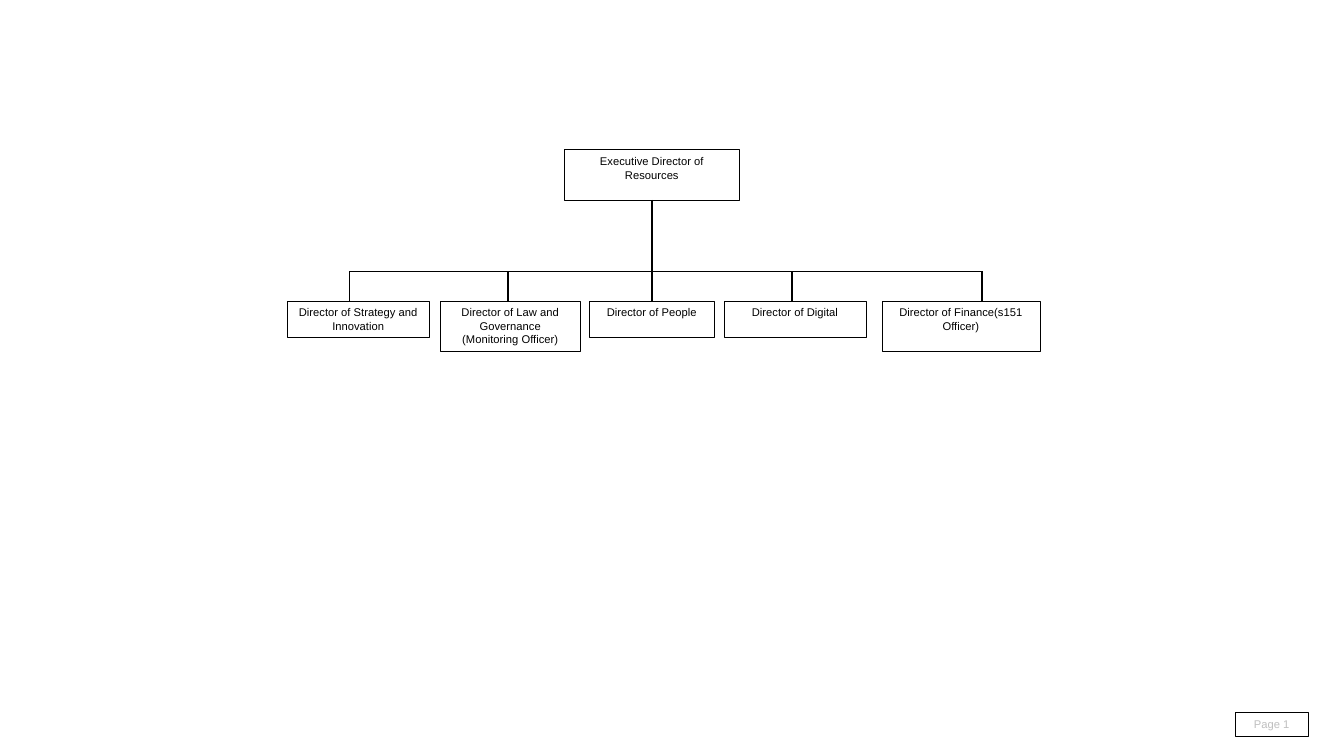
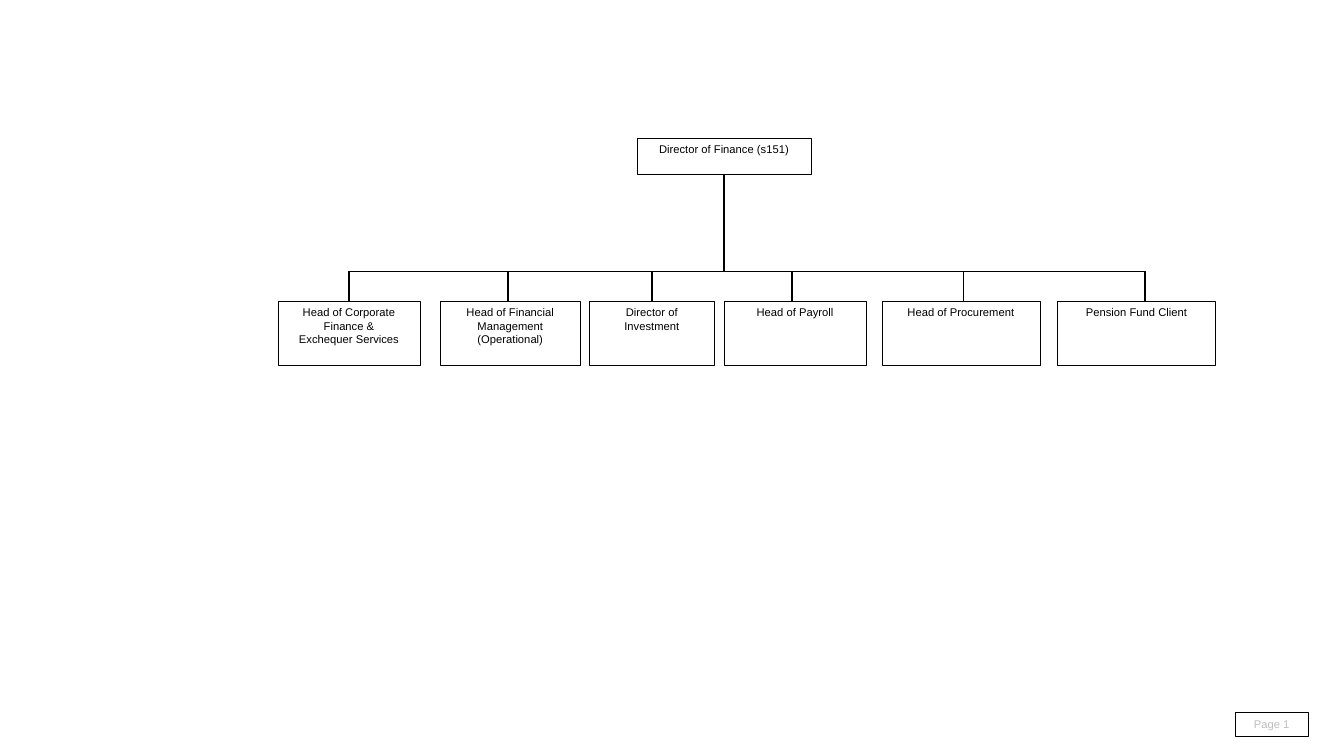
from pptx import Presentation
from pptx.dml.color import RGBColor
from pptx.enum.shapes import MSO_CONNECTOR, MSO_SHAPE
from pptx.enum.text import MSO_ANCHOR, PP_ALIGN
from pptx.oxml.ns import qn
from pptx.util import Inches, Pt
from lxml import etree

RECTANGLE = MSO_SHAPE.RECTANGLE
STRAIGHT = MSO_CONNECTOR.STRAIGHT
TOP, CENTER = MSO_ANCHOR.TOP, PP_ALIGN.CENTER
TOP_SIDE, BOTTOM_SIDE = 0, 2

# The grid has 160 columns and 90 rows, twelve cells to the inch
CELL = Inches(1) / 12
COLUMNS, ROWS = 160, 90
BUS_ROW, TEAM_ROW = 32.3, 35.8
LEAD_WIDTH = 20.8
COLORS = {"ink": "000000", "paper": "FFFFFF", "muted": "BFBFBF"}
FRAME = {"word_wrap": True, "vertical_anchor": TOP}
FONT = {"name": "Arial", "size": Pt(8)}


def cells(count):
    return round(count * CELL)


def color(name):
    return RGBColor.from_string(COLORS[name])


def apply(target, values):
    for name, value in values.items():
        setattr(target, name, value)


class Chart:
    """Holds the style and the current page of the organisation charts."""

    def __init__(self):
        self.deck = Presentation()
        self.deck.slide_width = cells(COLUMNS)
        self.deck.slide_height = cells(ROWS)
        self.page = None

    def new_page(self):
        self.page = self.deck.slides.add_slide(self.deck.slide_layouts[6])
        self.box("Page 1", 147.1, 84.8, 8.6, 2.9, ink="muted", fill="paper")

    def box(self, text, left, top, width, height, ink="ink", fill=None):
        box = self.page.shapes.add_shape(
            RECTANGLE, *map(cells, (left, top, width, height)))
        box.shadow.inherit = False
        if fill:
            box.fill.solid()
            box.fill.fore_color.rgb = color(fill)
        else:
            box.fill.background()
        box.line.color.rgb = color("ink")
        box.line.width = Pt(0.25)
        apply(box.text_frame, FRAME)
        box.text_frame.text = text
        for para in box.text_frame.paragraphs:
            para.alignment = CENTER
            apply(para.font, FONT)
            para.font.color.rgb = color(ink)
        return box

    def line(self, left, top, right, bottom):
        line = self.page.shapes.add_connector(
            STRAIGHT, *map(cells, (left, top, right, bottom)))
        line.line.color.rgb = color("ink")
        line.line.width = Pt(1)
        etree.SubElement(line._element.spPr, qn("a:effectLst"))
        return line

    def stem(self, box, side, column):
        """Run from a box to the bus, joined when it meets the side's middle."""
        middle = (box.left + box.width / 2) / CELL
        joined = abs(middle - column) < 0.1
        x = middle if joined else column
        edge = box.top + (box.height if side == BOTTOM_SIDE else 0)
        line = self.line(x, edge / CELL, x, BUS_ROW)
        if joined:
            line.begin_connect(box, side)

    def tree(self, lead, team):
        text, left, top, height = lead
        lead_box = self.box(text, left, top, LEAD_WIDTH, height)
        self.stem(lead_box, BOTTOM_SIDE, left + LEAD_WIDTH / 2)
        self.line(team[0][-1], BUS_ROW, team[-1][-1], BUS_ROW)
        for text, left, width, height, column in team:
            self.stem(self.box(text, left, TEAM_ROW, width, height), TOP_SIDE, column)


# Lead: text, left, top, height; team: text, left, width, height, stem column
CHARTS = [
    (("Executive Director of Resources", 67.2, 17.8, 6), [
        ("Director of Strategy and Innovation", 34.2, 16.9, 4.4, 41.6),
        ("Director of Law and Governance (Monitoring Officer)", 52.4, 16.7, 6, 60.5),
        ("Director of People", 70.2, 14.8, 4.4, 77.6),
        ("Director of Digital", 86.2, 16.9, 4.4, 94.3),
        ("Director of Finance(s151 Officer)", 105, 18.8, 6, 116.9),
    ]),
    (("Director of Finance (s151)", 75.8, 16.4, 4.4), [
        ("Head of Corporate Finance &\nExchequer Services", 33.1, 16.9, 7.7, 41.6),
        ("Head of Financial Management (Operational)", 52.4, 16.7, 7.7, 60.5),
        ("Director of Investment", 70.2, 14.8, 7.7, 77.6),
        ("Head of Payroll", 86.2, 16.9, 7.7, 94.3),
        ("Head of Procurement", 105, 18.8, 7.7, 114.7),
        ("Pension Fund Client", 125.9, 18.8, 7.7, 136.3),
    ]),
]


def main():
    chart = Chart()
    for lead, team in CHARTS:
        chart.new_page()
        chart.tree(lead, team)
    chart.deck.save("out.pptx")


if __name__ == "__main__":
    main()
